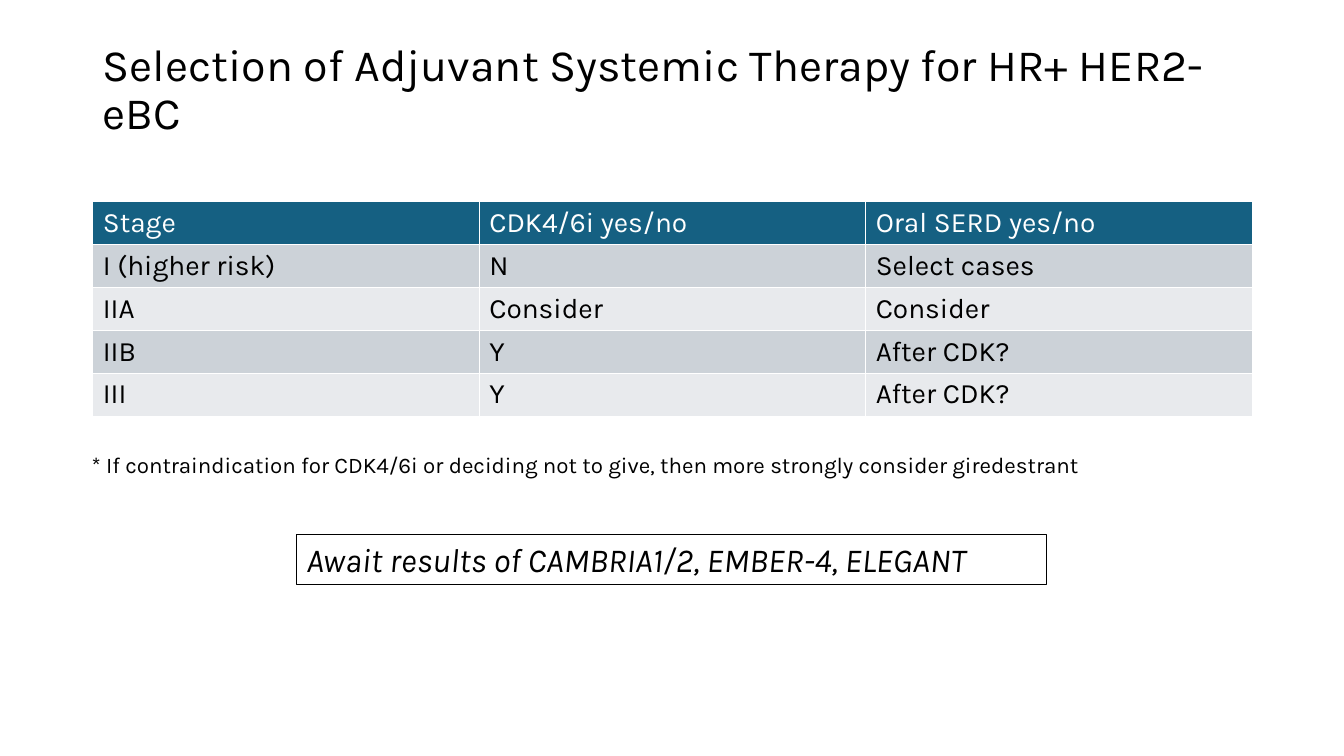
from dataclasses import dataclass

from pptx import Presentation
from pptx import util as u
from pptx.dml.color import RGBColor
from pptx.enum import shapes, text

TITLE = "Selection of Adjuvant Systemic Therapy for HR+ HER2- eBC"
ROWS = [
    ("Stage", "CDK4/6i yes/no", "Oral SERD yes/no"),
    ("I (higher risk)", "N", "Select cases"),
    ("IIA", "Consider", "Consider"),
    ("IIB", "Y", "After CDK?"),
    ("III", "Y", "After CDK?"),
]
NOTE = ("* If contraindication for CDK4/6i or deciding not to give, "
        "then more strongly consider giredestrant")
AWAIT = "Await results of CAMBRIA1/2, EMBER-4, ELEGANT"


@dataclass(frozen=True)
class Theme:
    face: str = "Karla"
    ink: str = "000000"
    white: str = "FFFFFF"
    head: str = "156082"
    bands: tuple = ("CCD2D8", "E8EAED")
    title: int = 32
    call: int = 24
    cell: int = 20
    note: int = 16


T = Theme()


def color(code):
    return RGBColor.from_string(code)


def box(*sides):
    return [u.Inches(side) for side in sides]


def write(frame, words, size, ink=T.ink, italic=False):
    frame.word_wrap = True
    para = frame.paragraphs[0]
    para.text = words
    para.alignment = text.PP_ALIGN.LEFT
    font = para.font
    font.name, font.size = T.face, u.Pt(size)
    font.bold, font.italic = False, italic
    font.color.rgb = color(ink)
    return para


def add_title(slide):
    title = slide.shapes.title
    title.left, title.top, title.width, title.height = box(0.92, 0.4, 11.5, 1.01)
    frame = title.text_frame
    frame.auto_size = text.MSO_AUTO_SIZE.NONE
    frame.vertical_anchor = text.MSO_ANCHOR.MIDDLE
    write(frame, TITLE, T.title).line_spacing = 0.9


def add_grid(slide):
    place = box(0.92, 2, 11.5, 0.41 * len(ROWS))
    grid = slide.shapes.add_table(len(ROWS), len(ROWS[0]), *place).table
    for r, row in enumerate(ROWS):
        fill = T.bands[(r - 1) % 2] if r else T.head
        for c, words in enumerate(row):
            cell = grid.cell(r, c)
            cell.fill.solid()
            cell.fill.fore_color.rgb = color(fill)
            write(cell.text_frame, words, T.cell, T.ink if r else T.white)


def add_note(slide):
    note = slide.shapes.add_textbox(*box(0.81, 4.43, 10.01, 0.37))
    write(note.text_frame, NOTE, T.note)


def add_call(slide):
    call = slide.shapes.add_shape(
        shapes.MSO_SHAPE.RECTANGLE, *box(2.94, 5.3, 7.44, 0.5))
    call.shadow.inherit = False
    call.fill.background()
    call.line.color.rgb = color(T.ink)
    call.line.width = u.Pt(0.75)
    call.text_frame.vertical_anchor = text.MSO_ANCHOR.TOP
    write(call.text_frame, AWAIT, T.call, italic=True)


def main():
    deck = Presentation()
    deck.slide_width, deck.slide_height = box(13.33, 7.5)
    slide = deck.slides.add_slide(deck.slide_layouts[5])
    for part in (add_title, add_grid, add_note, add_call):
        part(slide)
    deck.save("out.pptx")


if __name__ == "__main__":
    main()
